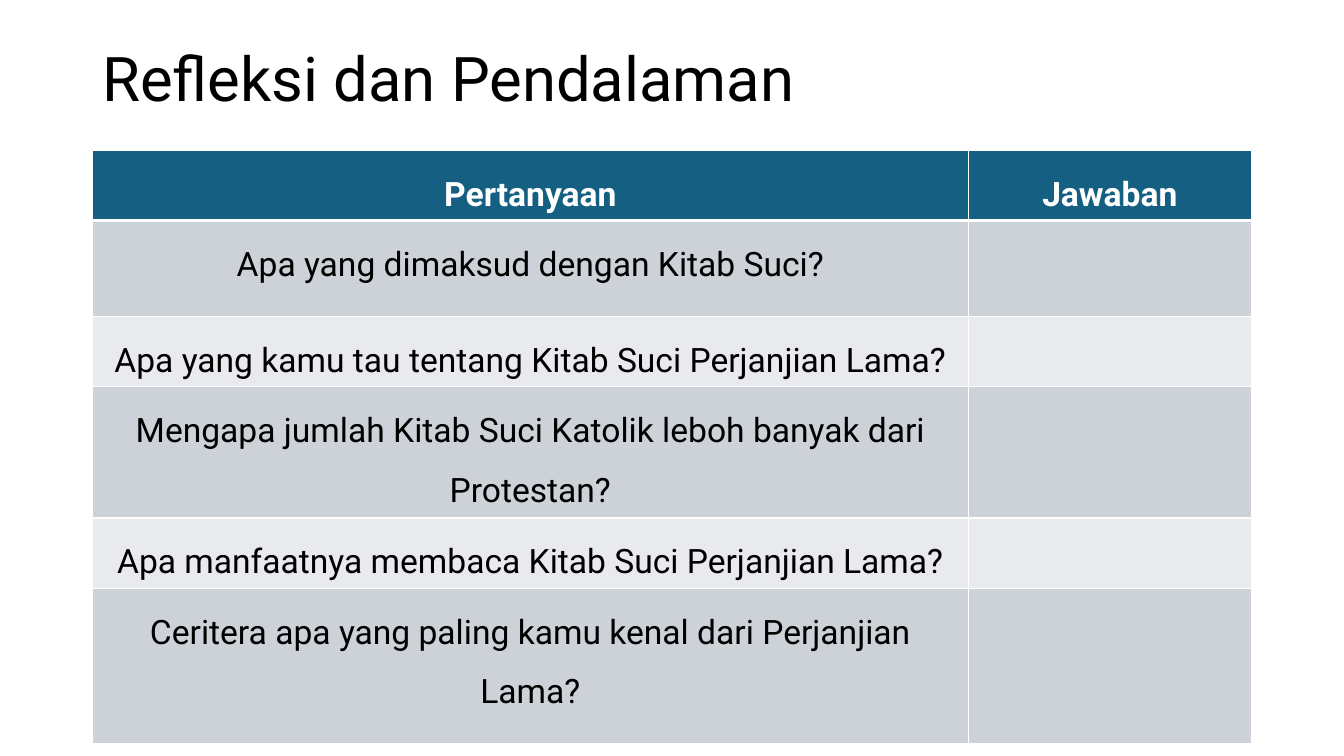
from lxml.etree import SubElement
from pptx import Presentation
from pptx.dml.color import RGBColor
from pptx.enum.text import MSO_ANCHOR as Anchor, PP_ALIGN as Align
from pptx.oxml.ns import qn
from pptx.util import Cm, Pt

BLACK = RGBColor(0x00, 0x00, 0x00)
WHITE = RGBColor(0xFF, 0xFF, 0xFF)
HEADER_BLUE = RGBColor(0x15, 0x60, 0x82)
BAND_DARK = RGBColor(0xCC, 0xD2, 0xD8)
BAND_LIGHT = RGBColor(0xE8, 0xEA, 0xED)

FONT = "Roboto"
LEFT, WIDTH = Cm(2.33), Cm(29.21)
COLUMN_WIDTHS = [22.07, 7.14]
ROWS = [  # height in cm, question, answer
    (1.45, "Pertanyaan", "Jawaban"),
    (2.41, "Apa yang dimaksud dengan Kitab Suci?", ""),
    (1.63, "Apa yang kamu tau tentang Kitab Suci Perjanjian Lama?", ""),
    (2.69, "Mengapa jumlah Kitab Suci Katolik leboh banyak dari Protestan?", ""),
    (1.4, "Apa manfaatnya membaca Kitab Suci Perjanjian Lama?", ""),
    (3.91, "Ceritera apa yang paling kamu kenal dari Perjanjian Lama?", ""),
]


def write_text(frame, text, *, size, color=BLACK, bold=False,
               align=Align.LEFT, spacing=1.0):
    para = frame.paragraphs[0]
    para.alignment = align
    para.line_spacing = spacing
    span = para.add_run()
    span.text = text
    span.font.name = FONT
    span.font.size = Pt(size)
    span.font.bold = bold
    span.font.color.rgb = color


def set_borders(cell, **widths):
    """Draw white borders; each keyword is a side with its width in points."""
    properties = cell._tc.get_or_add_tcPr()
    for side, width in widths.items():
        line = SubElement(properties, qn(f"a:ln{side}"), w=str(Pt(width)))
        fill = SubElement(line, qn("a:solidFill"))
        SubElement(fill, qn("a:srgbClr"), val=str(WHITE))


def add_title(page, text):
    box = page.shapes.add_textbox(LEFT, Cm(1.02), WIDTH, Cm(2.06))
    frame = box.text_frame
    frame.word_wrap = True
    frame.vertical_anchor = Anchor.MIDDLE
    write_text(frame, text, size=44, spacing=0.9)


def add_question_table(page):
    height = Cm(sum(row[0] for row in ROWS))
    table = page.shapes.add_table(len(ROWS), len(COLUMN_WIDTHS),
                                  LEFT, Cm(3.78), WIDTH, height).table
    for column, width in zip(table.columns, COLUMN_WIDTHS):
        column.width = Cm(width)

    for index, (row_height, *texts) in enumerate(ROWS):
        table.rows[index].height = Cm(row_height)
        header = index == 0
        band = BAND_DARK if index % 2 else BAND_LIGHT
        for cell, text in zip(table.rows[index].cells, texts):
            # The rule under the header is thicker than the others
            set_borders(cell, L=1, R=1, T=3 if index == 1 else 1,
                        B=3 if header else 1)
            cell.fill.solid()
            cell.fill.fore_color.rgb = HEADER_BLUE if header else band
            if text:
                write_text(cell.text_frame, text, size=24, bold=header,
                           color=WHITE if header else BLACK,
                           align=Align.CENTER, spacing=1.5)


def main():
    deck = Presentation()
    deck.slide_width, deck.slide_height = Cm(33.87), Cm(19.05)
    page = deck.slides.add_slide(deck.slide_layouts[6])
    add_title(page, "Refleksi dan Pendalaman")
    add_question_table(page)
    deck.save("out.pptx")


if __name__ == "__main__":
    main()
